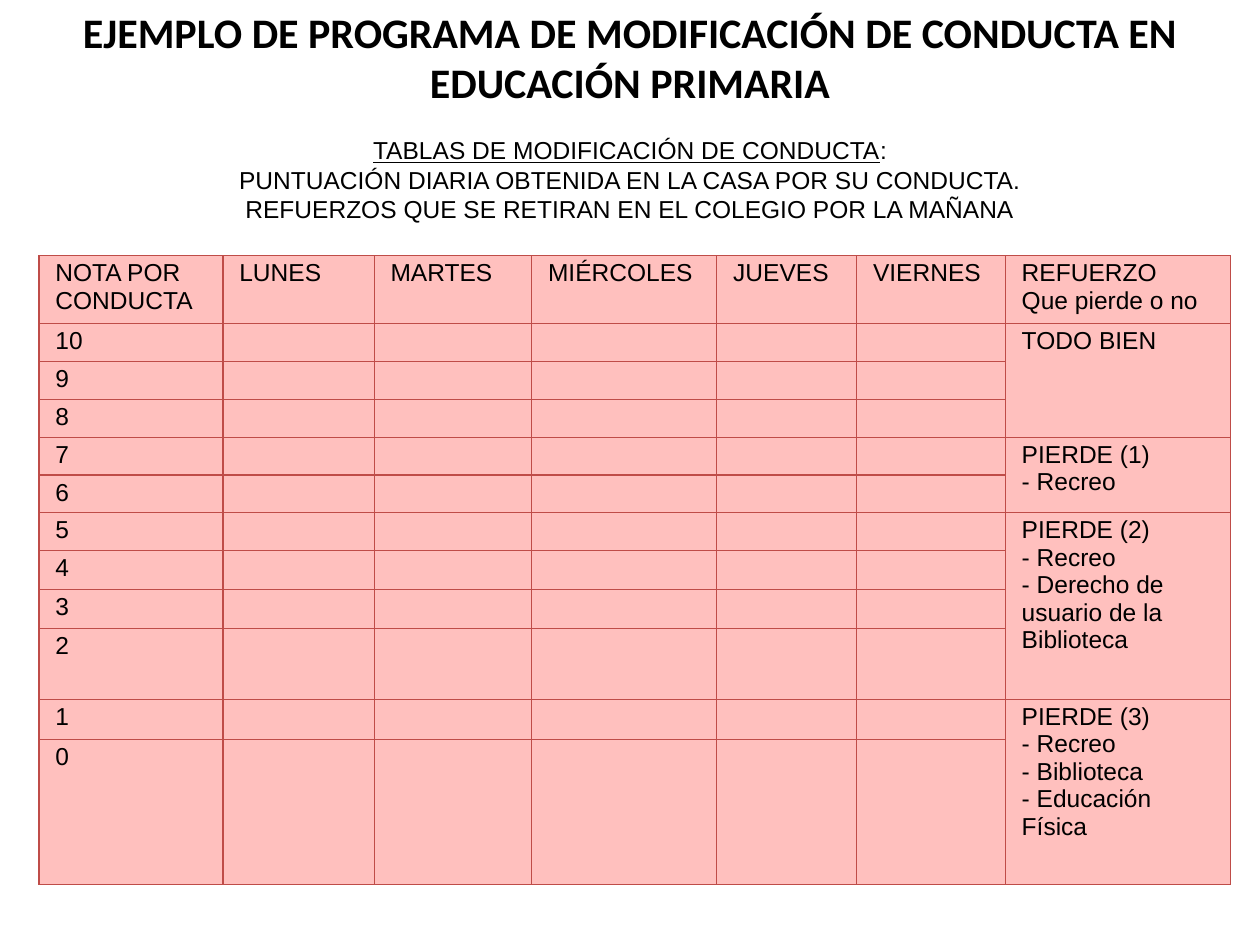
import pptx
import pptx.util
import pptx.dml.color
import pptx.enum.text
import pptx.oxml.ns
from lxml import etree

Inches = pptx.util.Inches
Pt = pptx.util.Pt
qn = pptx.oxml.ns.qn
ALIGN = pptx.enum.text.PP_ALIGN
ANCHOR = pptx.enum.text.MSO_ANCHOR

BLACK = pptx.dml.color.RGBColor(0, 0, 0)
PINK = pptx.dml.color.RGBColor(0xFF, 0xC0, 0xBE)
RED = pptx.dml.color.RGBColor(0xBF, 0x4C, 0x48)

WIDE, HIGH = Inches(10), Inches(7.5)
SIZE = 14
COLS = [1.46, 1.2, 1.25, 1.47, 1.11, 1.18, 1.79]
ROWS = [0.54] + [0.3] * 6 + [0.31] * 2 + [0.56, 0.32, 1.15]
HEADS = ["NOTA POR\nCONDUCTA", "LUNES", "MARTES", "MIÉRCOLES", "JUEVES",
         "VIERNES", "REFUERZO\nQue pierde o no"]
PRIZES = [
    (3, "TODO BIEN"),
    (2, "PIERDE (1)\n- Recreo"),
    (4, "PIERDE (2)\n- Recreo\n- Derecho de usuario de la Biblioteca"),
    (2, "PIERDE (3)\n- Recreo\n- Biblioteca\n- Educación Física"),
]


def style(para, size, face="Arial", bold=False):
    font = para.font
    font.size, font.name, font.bold = Pt(size), face, bold
    font.color.rgb = BLACK


def add_title(slide, text):
    title = slide.shapes.title
    title.left, title.top = 0, 0
    title.width, title.height = WIDE, int(HIGH * 0.124)
    frame = title.text_frame
    frame.text = text
    frame.word_wrap = True
    frame.vertical_anchor = ANCHOR.TOP
    para = frame.paragraphs[0]
    para.alignment = ALIGN.CENTER
    para.space_after = Pt(6)
    style(para, 24, "Calibri", True)


def add_intro(slide, head, lines):
    box = slide.shapes.add_textbox(0, int(HIGH * 0.136), WIDE, int(HIGH * 0.108))
    frame = box.text_frame
    frame.word_wrap = True
    frame.vertical_anchor = ANCHOR.MIDDLE
    first = frame.paragraphs[0]
    run = first.add_run()
    run.text = head
    run.font.underline = True
    first.add_run().text = ":"
    for line in lines:
        frame.add_paragraph().text = line
    for para in frame.paragraphs:
        para.alignment = ALIGN.CENTER
        style(para, SIZE)


def add_edges(cell):
    props = cell._tc.get_or_add_tcPr()
    for side in ("lnL", "lnR", "lnT", "lnB"):
        line = etree.SubElement(props, qn("a:" + side), w=str(Pt(0.75)))
        fill = etree.SubElement(line, qn("a:solidFill"))
        etree.SubElement(fill, qn("a:srgbClr"), val=str(RED))


def fill_cell(cell, text):
    cell.margin_left = cell.margin_right = Inches(0.13)
    cell.margin_top = cell.margin_bottom = Inches(0.03)
    add_edges(cell)
    cell.fill.solid()
    cell.fill.fore_color.rgb = PINK
    cell.text = text
    for para in cell.text_frame.paragraphs:
        style(para, SIZE)
        if not text:
            etree.SubElement(para._p, qn("a:endParaRPr"), sz=str(SIZE * 100))


def add_grid(slide):
    frame = slide.shapes.add_table(len(ROWS), len(COLS), Inches(0.31), Inches(2.03),
                                   Inches(sum(COLS)), Inches(sum(ROWS)))
    table = frame.table
    table.first_row = table.horz_banding = False
    for col, width in zip(table.columns, COLS):
        col.width = Inches(width)
    for row, height in zip(table.rows, ROWS):
        row.height = Inches(height)

    last = len(COLS) - 1
    words = {(0, c): head for c, head in enumerate(HEADS)}
    words.update({(r, 0): str(11 - r) for r in range(1, len(ROWS))})
    top = 1
    for span, text in PRIZES:
        words[top, last] = text
        table.cell(top, last).merge(table.cell(top + span - 1, last))
        top += span
    for r in range(len(ROWS)):
        for c in range(len(COLS)):
            fill_cell(table.cell(r, c), words.get((r, c), ""))


def main():
    deck = pptx.Presentation()
    deck.slide_width, deck.slide_height = WIDE, HIGH
    slide = deck.slides.add_slide(deck.slide_layouts[5])
    add_intro(slide, "TABLAS DE MODIFICACIÓN DE CONDUCTA",
              ["PUNTUACIÓN DIARIA OBTENIDA EN LA CASA POR SU CONDUCTA.",
               "REFUERZOS QUE SE RETIRAN EN EL COLEGIO POR LA MAÑANA"])
    add_grid(slide)
    add_title(slide, "EJEMPLO DE PROGRAMA DE MODIFICACIÓN DE CONDUCTA EN EDUCACIÓN PRIMARIA")
    deck.save("out.pptx")


if __name__ == "__main__":
    main()
